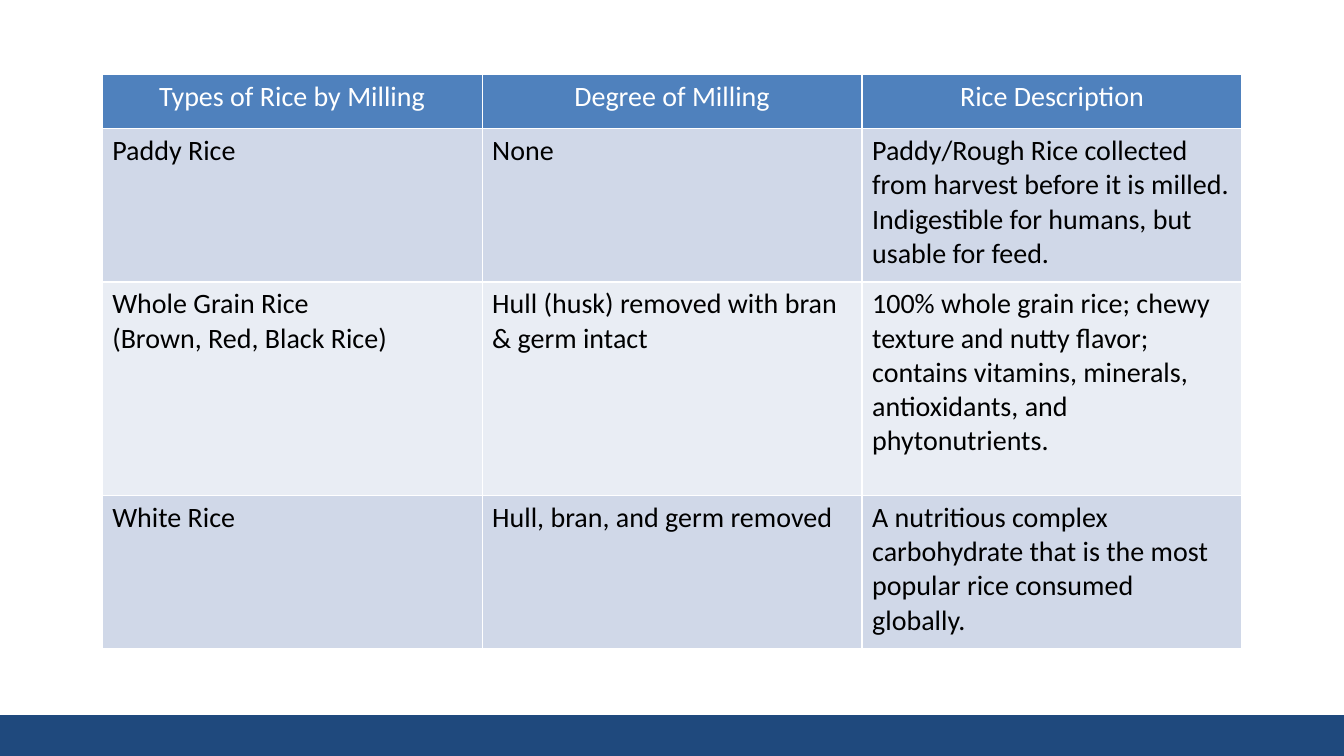
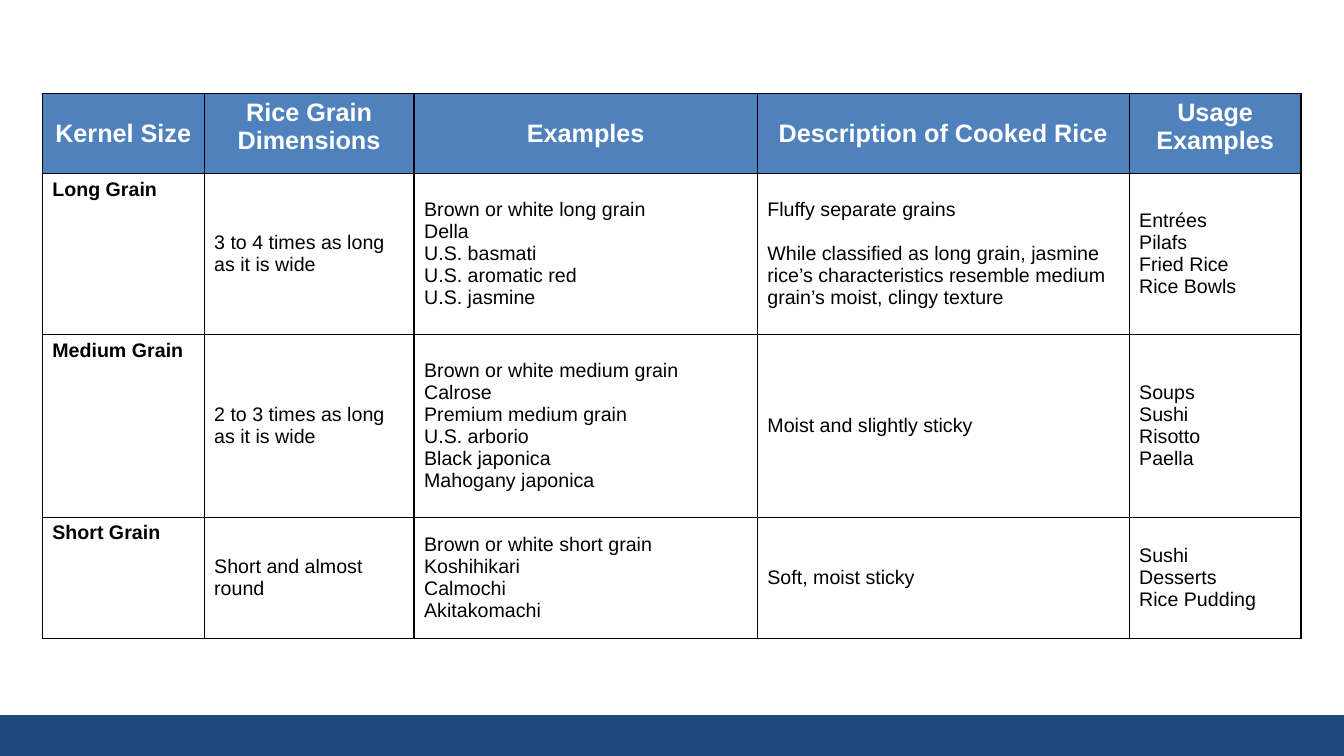
import lxml.etree
import pptx
import pptx.dml.color
import pptx.enum.shapes
import pptx.enum.text
import pptx.oxml.ns
import pptx.util

Pt = pptx.util.Pt
ALIGN = pptx.enum.text.PP_ALIGN
ANCHOR = pptx.enum.text.MSO_ANCHOR

PAGE_WIDTH, PAGE_HEIGHT = 960, 540
BAND_HEIGHT = 28
BLANK_LAYOUT = 6

COLORS = {
    "band": "1F497D",
    "header": "4F81BD",
    "stripe_dark": "D0D8E8",
    "stripe_light": "E9EDF4",
    "white": "FFFFFF",
    "black": "000000",
}

MILLING_ROWS = [
    ["Types of Rice by Milling", "Degree of Milling", "Rice Description"],
    ["Paddy Rice", "None",
     "Paddy/Rough Rice collected from harvest before it is milled. "
     "Indigestible for humans, but usable for feed."],
    ["Whole Grain Rice\n(Brown, Red, Black Rice)",
     "Hull (husk) removed with bran & germ intact",
     "100% whole grain rice; chewy texture and nutty flavor; contains "
     "vitamins, minerals, antioxidants, and phytonutrients."],
    ["White Rice", "Hull, bran, and germ removed",
     "A nutritious complex carbohydrate that is the most popular rice "
     "consumed globally."],
]

KERNEL_ROWS = [
    ["Kernel Size", "Rice Grain Dimensions", "Examples",
     "Description of Cooked Rice", "Usage Examples"],
    ["Long Grain", "3 to 4 times as long as it is wide",
     "Brown or white long grain\nDella\nU.S. basmati\nU.S. aromatic red\nU.S. jasmine",
     "Fluffy separate grains\nWhile classified as long grain, jasmine rice’s "
     "characteristics resemble medium grain’s moist, clingy texture",
     "Entrées\nPilafs\nFried Rice\nRice Bowls"],
    ["Medium Grain", "2 to 3 times as long as it is wide",
     "Brown or white medium grain\nCalrose\nPremium medium grain\n"
     "U.S. arborio\nBlack japonica\nMahogany japonica",
     "Moist and slightly sticky", "Soups\nSushi\nRisotto\nPaella"],
    ["Short Grain", "Short and almost round",
     "Brown or white short grain\nKoshihikari\nCalmochi\nAkitakomachi",
     "Soft, moist sticky", "Sushi\nDesserts\nRice Pudding"],
]


def rgb(name):
    return pptx.dml.color.RGBColor.from_string(COLORS[name])


def set_borders(cell, color):
    properties = cell._tc.get_or_add_tcPr()
    qn = pptx.oxml.ns.qn
    for position, side in enumerate(("lnL", "lnR", "lnT", "lnB")):
        line = lxml.etree.Element(qn("a:" + side), w=str(Pt(1)))
        fill = lxml.etree.SubElement(line, qn("a:solidFill"))
        lxml.etree.SubElement(fill, qn("a:srgbClr"), val=COLORS[color])
        properties.insert(position, line)


def format_cell(cell, text, font, size, color, fill, border,
                bold=False, align=ALIGN.LEFT, anchor=ANCHOR.TOP):
    cell.text = text
    cell.vertical_anchor = anchor
    if fill:
        cell.fill.solid()
        cell.fill.fore_color.rgb = rgb(fill)
    else:
        cell.fill.background()
    set_borders(cell, border)
    for para in cell.text_frame.paragraphs:
        para.alignment = align
        para.font.name = font
        para.font.size = Pt(size)
        para.font.bold = bold
        para.font.color.rgb = rgb(color)


def add_grid(page, left, top, widths, heights, rows, style_cell):
    frame = page.shapes.add_table(
        len(heights), len(widths), Pt(left), Pt(top), Pt(sum(widths)), Pt(sum(heights)))
    table = frame.table
    table.first_row = False
    table.horz_banding = False
    for column, width in zip(table.columns, widths):
        column.width = Pt(width)
    for row, height in zip(table.rows, heights):
        row.height = Pt(height)
    for row_index, texts in enumerate(rows):
        for column_index, text in enumerate(texts):
            format_cell(table.cell(row_index, column_index), text,
                        **style_cell(row_index, column_index))
    return table


def milling_style(row, column):
    style = {"font": "Calibri", "size": 20, "border": "white"}
    if row == 0:
        return style | {"color": "white", "fill": "header", "align": ALIGN.CENTER}
    return style | {"color": "black", "fill": "stripe_dark" if row % 2 else "stripe_light"}


def kernel_style(row, column):
    style = {"font": "Arial", "border": "black"}
    if row == 0:
        wrapped = column in (1, 4)
        return style | {"size": 18, "color": "white", "fill": "header", "bold": True,
                        "align": ALIGN.CENTER,
                        "anchor": ANCHOR.TOP if wrapped else ANCHOR.MIDDLE}
    label = column == 0
    return style | {"size": 14, "color": "black", "fill": None, "bold": label,
                    "anchor": ANCHOR.TOP if label else ANCHOR.MIDDLE}


def add_band(page, left, top, width, height):
    band = page.shapes.add_shape(
        pptx.enum.shapes.MSO_SHAPE.RECTANGLE, Pt(left), Pt(top), Pt(width), Pt(height))
    band.shadow.inherit = False
    band.fill.solid()
    band.fill.fore_color.rgb = rgb("band")
    band.line.color.rgb = rgb("band")
    band.line.width = Pt(2)


def add_page(deck):
    page = deck.slides.add_slide(deck.slide_layouts[BLANK_LAYOUT])
    add_band(page, 0, PAGE_HEIGHT - BAND_HEIGHT, PAGE_WIDTH, BAND_HEIGHT)
    return page


def add_milling_page(deck):
    add_grid(add_page(deck), 73, 53.5, [271.4] * 3, [38.6, 109.4, 152.6, 109.4],
             MILLING_ROWS, milling_style)


def add_kernel_page(deck):
    table = add_grid(add_page(deck), 30.2, 66.8, [115.6, 150, 245.2, 265.6, 122.8],
                     [57, 115, 130.6, 87], KERNEL_ROWS, kernel_style)
    jasmine_note = table.cell(1, 3).text_frame.paragraphs[1]
    jasmine_note.space_before = Pt(16)


def main():
    deck = pptx.Presentation()
    deck.slide_width = Pt(PAGE_WIDTH)
    deck.slide_height = Pt(PAGE_HEIGHT)
    add_milling_page(deck)
    add_kernel_page(deck)
    deck.save("out.pptx")


if __name__ == "__main__":
    main()
